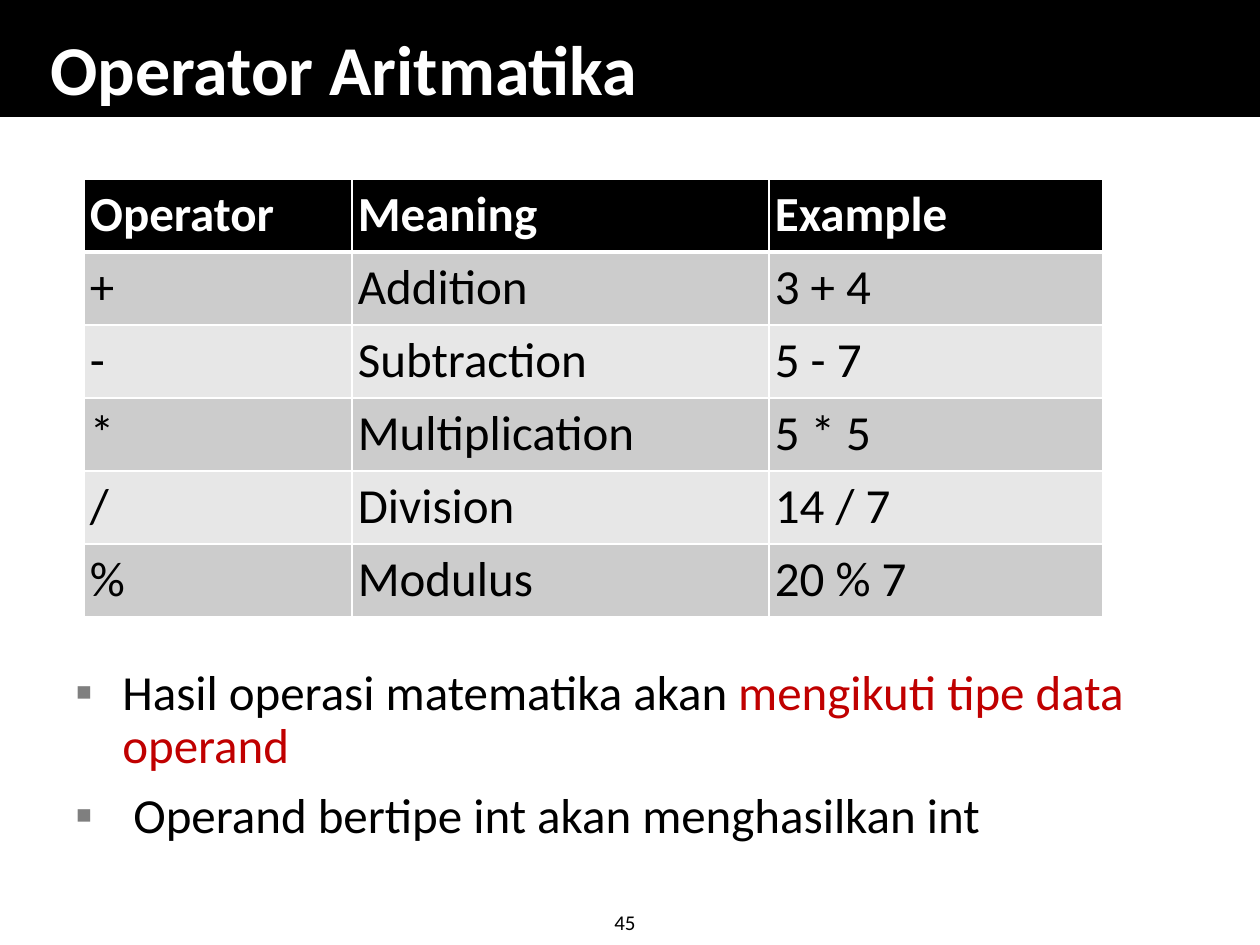
import lxml.etree
import pptx
import pptx.dml.color
import pptx.enum.shapes
import pptx.enum.text
import pptx.oxml.ns
import pptx.util

PX = 914400 / 126
FONT = "Calibri"
COLORS = {
    "black": "000000",
    "white": "FFFFFF",
    "odd_row": "CCCCCC",
    "even_row": "E7E7E7",
    "bullet": "7F7F7F",
    "accent": "C00000",
}
OPERATORS = [
    ("Operator", "Meaning", "Example"),
    ("+", "Addition", "3 + 4"),
    ("-", "Subtraction", "5 - 7"),
    ("*", "Multiplication", "5 * 5"),
    ("/", "Division", "14 / 7"),
    ("%", "Modulus", "20 % 7"),
]
NOTES = [
    [("Hasil operasi matematika akan ", "black"), ("mengikuti tipe data operand", "accent")],
    [(" Operand bertipe int akan menghasilkan int", "black")],
]


def px(length):
    return pptx.util.Emu(round(length * PX))


def rgb(name):
    return pptx.dml.color.RGBColor.from_string(COLORS[name])


def style(font, size, color, bold=False):
    font.name = FONT
    font.size = pptx.util.Pt(size)
    font.bold = bold
    font.color.rgb = rgb(color)


def add_element(parent, tag, **attributes):
    return lxml.etree.SubElement(parent, pptx.oxml.ns.qn(tag), attributes)


def add_header(slide, left, top, width, height):
    band = slide.shapes.add_shape(
        pptx.enum.shapes.MSO_SHAPE.RECTANGLE, px(left), px(top), px(width), px(height))
    band.shadow.inherit = False
    band.fill.solid()
    band.fill.fore_color.rgb = rgb("black")
    band.line.color.rgb = rgb("black")
    band.line.width = pptx.util.Pt(1)

    title = slide.shapes.title
    slide.shapes._spTree.append(title._element)
    title.left, title.top = px(left + 38), px(top + 26)
    title.width, title.height = px(width - 81), px(height - 26)
    frame = title.text_frame
    frame.text = "Operator Aritmatika"
    frame.word_wrap = True
    frame.auto_size = pptx.enum.text.MSO_AUTO_SIZE.NONE
    frame.vertical_anchor = pptx.enum.text.MSO_ANCHOR.BOTTOM
    heading = frame.paragraphs[0]
    heading.alignment = pptx.enum.text.PP_ALIGN.LEFT
    style(heading.font, 40, "white", True)


def set_borders(cell, row):
    widths = {"a:lnL": 1, "a:lnR": 1, "a:lnT": 3 if row == 1 else 1, "a:lnB": 3 if row == 0 else 1}
    properties = cell._tc.get_or_add_tcPr()
    for position, (side, width) in enumerate(widths.items()):
        border = add_element(properties, side, w=str(pptx.util.Pt(width)))
        add_element(add_element(border, "a:solidFill"), "a:srgbClr", val=COLORS["white"])
        properties.insert(position, border)


def add_operator_table(slide, left, top, column_widths, row_height):
    table = slide.shapes.add_table(
        len(OPERATORS), len(column_widths), px(left), px(top),
        px(sum(column_widths)), px(row_height * len(OPERATORS))).table
    for column, width in zip(table.columns, column_widths):
        column.width = px(width)
    for row, texts in enumerate(OPERATORS):
        table.rows[row].height = px(row_height)
        fill = "black" if row == 0 else "odd_row" if row % 2 else "even_row"
        for column, text in enumerate(texts):
            cell = table.cell(row, column)
            cell.text = text
            cell.margin_left = cell.margin_right = cell.margin_top = cell.margin_bottom = px(6)
            cell.fill.solid()
            cell.fill.fore_color.rgb = rgb(fill)
            set_borders(cell, row)
            style(cell.text_frame.paragraphs[0].font, 28, "white" if row == 0 else "black", row == 0)


def add_notes(slide, left, top, width, height):
    frame = slide.shapes.add_textbox(px(left), px(top), px(width), px(height)).text_frame
    frame.word_wrap = True
    for index, runs in enumerate(NOTES):
        note = frame.paragraphs[0] if index == 0 else frame.add_paragraph()
        note.line_spacing = 0.9
        note.space_before = pptx.util.Pt(8 if index else 0)
        note.space_after = pptx.util.Pt(2)
        properties = note._p.get_or_add_pPr()
        properties.set("marL", str(px(47)))
        properties.set("indent", str(-px(47)))
        add_element(add_element(properties, "a:buClr"), "a:srgbClr", val=COLORS["bullet"])
        add_element(properties, "a:buFont", typeface=FONT)
        add_element(properties, "a:buChar", char="▪")
        note.font.name = FONT
        note.font.size = pptx.util.Pt(28)
        for text, color in runs:
            run = note.add_run()
            run.text = text
            run.font.color.rgb = rgb(color)


def add_page_number(slide, left, top, width, height):
    frame = slide.shapes.add_textbox(px(left), px(top), px(width), px(height)).text_frame
    frame.word_wrap = False
    frame.text = "45"
    style(frame.paragraphs[0].font, 12, "black")


def main():
    deck = pptx.Presentation()
    deck.slide_width, deck.slide_height = px(1260), px(945)
    slide = deck.slides.add_slide(deck.slide_layouts[5])
    add_header(slide, 0, 0, 1260, 116)
    add_page_number(slide, 602, 903, 52, 38)
    add_notes(slide, 63, 662, 1134, 188)
    add_operator_table(slide, 84, 179, [268, 417, 334], 73)
    deck.save("out.pptx")


if __name__ == "__main__":
    main()
